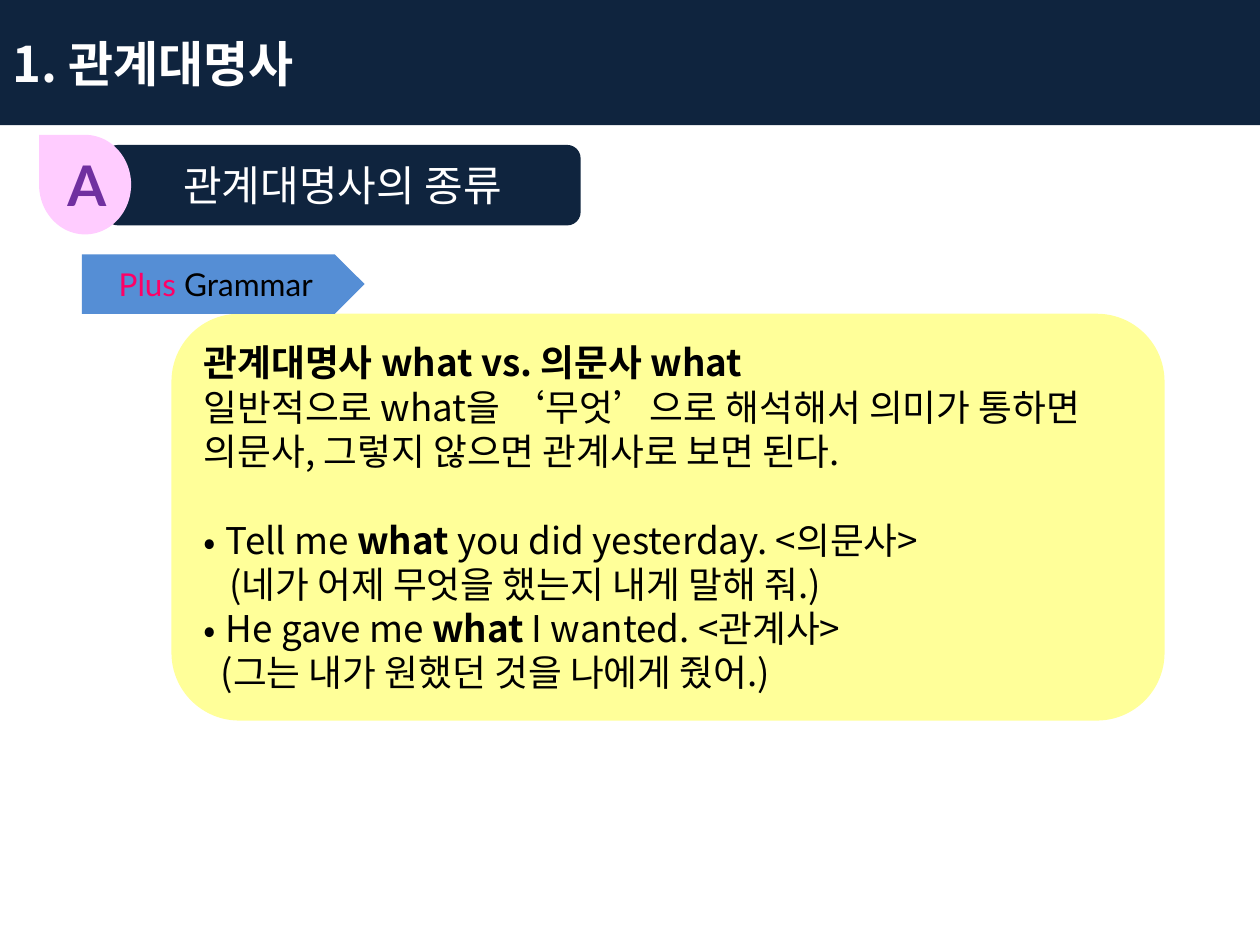
from pptx import Presentation
from pptx.dml.color import RGBColor
from pptx.enum.shapes import MSO_SHAPE
from pptx.enum.text import MSO_ANCHOR, MSO_AUTO_SIZE, PP_ALIGN
from pptx.oxml.ns import qn
from pptx.util import Pt
from lxml.etree import SubElement

COLORS = {"navy": "0F243E", "yellow": "FFFF99", "blue": "558ED5", "pink": "FFCCFF",
          "purple": "7030A0", "rose": "FF0066", "black": "000000", "white": "FFFFFF",
          "pale": "FCFCFD"}
KOREAN, LATIN = "Noto Sans CJK KR", "Lato"
LINE_HEIGHT = 25.3
BULLET_INDENT = 12.6

TITLE = [("1. ", "pale", True), ("관계대명사", "white", True)]
SECTION = [("관계대명사의 종류", "white", False)]
TAG = [("Plus ", "rose", False), ("Grammar", "black", False)]
LETTER = [("A", "purple", True)]
LESSON = [
    {"spans": [("관계대명사 what vs. 의문사 what", "black", True)]},
    {"spans": [("일반적으로 what을 ‘무엇’으로 해석해서 의미가 통하면 의문사, "
                "그렇지 않으면 관계사로 보면 된다.", "black", False)]},
    {"spans": [("Tell me ", "black", False), ("what ", "black", True),
               ("you did yesterday. <의문사>", "black", False)],
     "bullet": True, "before": LINE_HEIGHT},
    {"spans": [("(네가 어제 무엇을 했는지 내게 말해 줘.)", "black", False)], "margin": 14.5},
    {"spans": [("He gave me ", "black", False), ("what", "black", True),
               (" I wanted. <관계사>", "black", False)], "bullet": True},
    {"spans": [("(그는 내가 원했던 것을 나에게 줬어.)", "black", False)], "margin": 9.7},
]


def set_all(target, values):
    for name, value in values.items():
        setattr(target, name, value)


def place(shape, bounds):
    set_all(shape, dict(zip(("left", "top", "width", "height"), map(Pt, bounds))))


def paint(shape, color):
    shape.fill.solid()
    shape.fill.fore_color.rgb = RGBColor.from_string(COLORS[color])
    shape.line.fill.background()


def add_block(slide, kind, bounds, color):
    shape = slide.shapes.add_shape(kind, *map(Pt, bounds))
    shape.shadow.inherit = False
    paint(shape, color)
    return shape


def prepare_frame(shape, wrap=True):
    frame = shape.text_frame
    set_all(frame, {"word_wrap": wrap, "auto_size": MSO_AUTO_SIZE.NONE,
                    "vertical_anchor": MSO_ANCHOR.MIDDLE})
    return frame


def write(para, spans, size, font, align=PP_ALIGN.LEFT):
    para.alignment = align
    for text, color, bold in spans:
        span = para.add_run()
        span.text = text
        set_all(span.font, {"size": Pt(size), "bold": bold, "name": font})
        span.font.color.rgb = RGBColor.from_string(COLORS[color])
        SubElement(span.font._element, qn("a:ea"), typeface=font)


def write_lesson(frame):
    for index, entry in enumerate(LESSON):
        para = frame.paragraphs[0] if index == 0 else frame.add_paragraph()
        write(para, entry["spans"], 21, KOREAN)
        set_all(para, {"line_spacing": Pt(LINE_HEIGHT),
                       "space_before": Pt(entry.get("before", 0))})
        properties = para._p.get_or_add_pPr()
        bullet = entry.get("bullet", False)
        margin = BULLET_INDENT if bullet else entry.get("margin", 0)
        properties.set("marL", str(Pt(margin)))
        properties.set("indent", str(-Pt(margin) if bullet else 0))
        if bullet:
            SubElement(properties, qn("a:buFont"), typeface=KOREAN)
            SubElement(properties, qn("a:buChar"), char="•")


def main():
    """Build the grammar slide on the kinds of relative pronouns."""
    deck = Presentation()
    set_all(deck, {"slide_width": Pt(720), "slide_height": Pt(540)})
    slide = deck.slides.add_slide(deck.slide_layouts[5])

    title = slide.shapes.title
    place(title, (0, 0, 720, 71.5))
    paint(title, "navy")
    write(prepare_frame(title).paragraphs[0], TITLE, 28, KOREAN)

    rounded = MSO_SHAPE.FLOWCHART_ALTERNATE_PROCESS
    lesson = add_block(slide, rounded, (98, 179.3, 567.5, 232.5), "yellow")
    write_lesson(prepare_frame(lesson))

    labels = [
        (MSO_SHAPE.PENTAGON, (46.8, 145.3, 161.5, 34), "blue", TAG, 18, LATIN),
        (rounded, (59.8, 82.8, 272, 46), "navy", SECTION, 24, KOREAN),
    ]
    for kind, bounds, color, spans, size, font in labels:
        label = add_block(slide, kind, bounds, color)
        write(prepare_frame(label).paragraphs[0], spans, size, font, PP_ALIGN.CENTER)

    badge = add_block(slide, MSO_SHAPE.TEAR, (20.2, 79.2, 56.9, 52.6), "pink")
    badge.rotation = 270
    letter = slide.shapes.add_textbox(*map(Pt, (31.4, 82.3, 33.8, 46)))
    write(prepare_frame(letter, wrap=False).paragraphs[0], LETTER, 32, LATIN)

    deck.save("out.pptx")


if __name__ == "__main__":
    main()
